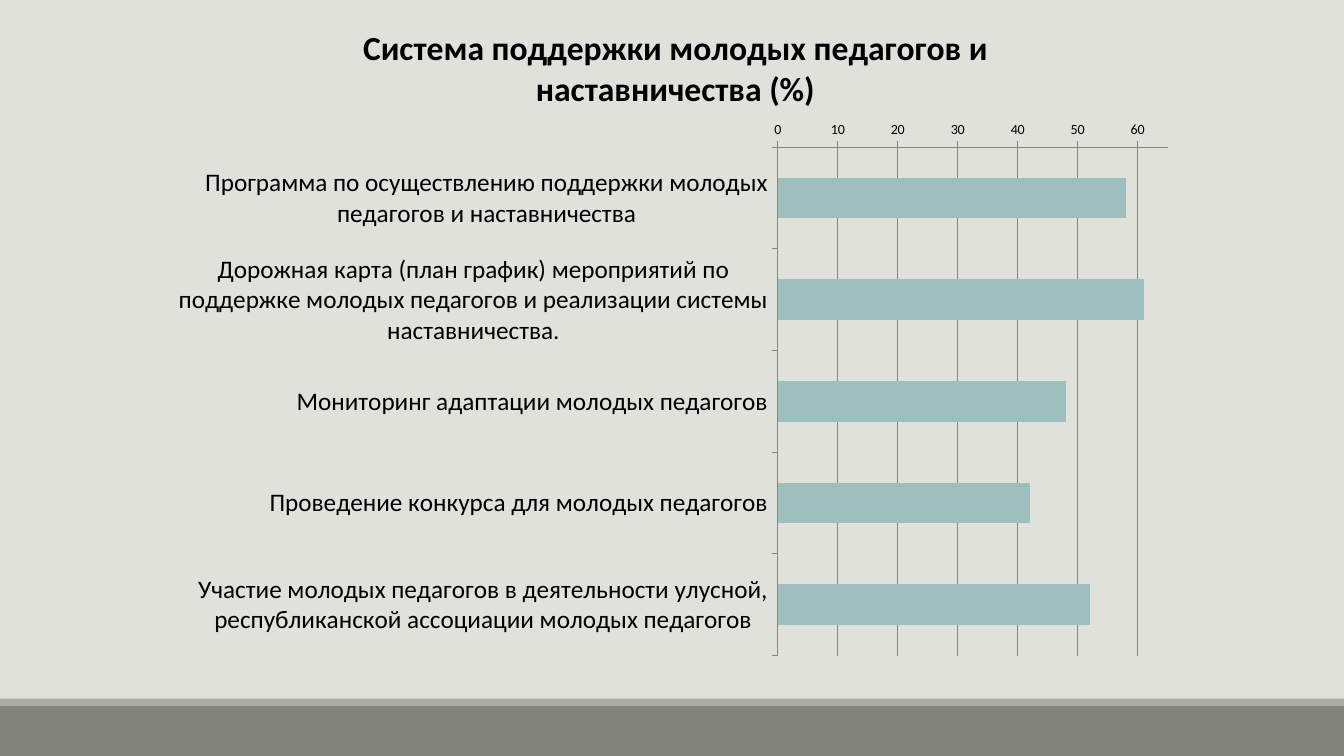
from typing import NamedTuple

from lxml.etree import SubElement
from pptx import Presentation
from pptx.chart.axis import ValueAxis
from pptx.chart.chart import Chart
from pptx.chart.data import CategoryChartData
from pptx.dml.color import RGBColor
from pptx.enum.chart import XL_CHART_TYPE, XL_TICK_MARK
from pptx.enum.shapes import MSO_SHAPE
from pptx.oxml.ns import qn
from pptx.slide import Slide
from pptx.text.text import Font, TextFrame
from pptx.util import Inches, Pt

WIDTH, HEIGHT = Inches(13.33), Inches(7.5)
FONT = "Calibri"
COLORS = {
    "background": "E1E1DB",
    "footer": "82847C",
    "stripe": "ACADA8",
    "bar": "9DBFBE",
    "axis": "868686",
    "text": "000000",
}


class Band(NamedTuple):
    """Full-width strip; top and height are shares of the slide height."""
    top: float
    height: float
    color: str


class Indicator(NamedTuple):
    label: str
    percent: int


BANDS = [Band(0.933, 0.067, "footer"), Band(0.924, 0.009, "stripe")]
INDICATORS = [
    Indicator("Программа по осуществлению поддержки молодых педагогов и наставничества", 58),
    Indicator("Дорожная карта (план график) мероприятий по поддержке молодых педагогов "
              "и реализации системы наставничества.", 61),
    Indicator("Мониторинг адаптации молодых педагогов", 48),
    Indicator("Проведение конкурса для молодых педагогов", 42),
    Indicator("Участие молодых педагогов в деятельности улусной, республиканской "
              "ассоциации молодых педагогов", 52),
]


def rgb(name: str) -> RGBColor:
    return RGBColor.from_string(COLORS[name])


def format_font(font: Font, size: float, bold: bool = False, color: str = "text") -> None:
    font.name, font.size, font.bold = FONT, Pt(size), bold
    font.color.rgb = rgb(color)


def write_text(tf: TextFrame, text: str, **style) -> None:
    r = tf.paragraphs[0].add_run()
    r.text = text
    format_font(r.font, **style)


def add_band(s: Slide, band: Band) -> None:
    sp = s.shapes.add_shape(MSO_SHAPE.RECTANGLE, 0, int(HEIGHT * band.top),
                            WIDTH, int(HEIGHT * band.height))
    sp.shadow.inherit = False
    sp.fill.solid()
    sp.fill.fore_color.rgb = rgb(band.color)
    sp.line.fill.background()


def place_plot(chart: Chart, **shares: float) -> None:
    """Fix the inner plot area, given as shares of the chart frame."""
    area = chart.element.find(".//" + qn("c:plotArea"))
    for old in area.findall(qn("c:layout")):
        area.remove(old)
    layout = SubElement(area, qn("c:layout"))
    area.insert(0, layout)
    manual = SubElement(layout, qn("c:manualLayout"))
    settings = {"layoutTarget": "inner", "xMode": "edge", "yMode": "edge", **shares}
    for tag, value in settings.items():
        SubElement(manual, qn(f"c:{tag}")).set("val", str(value))


def style_value_axis(axis: ValueAxis) -> None:
    axis.minimum_scale, axis.maximum_scale, axis.major_unit = 0, 65, 10
    axis.has_major_gridlines = True
    line = axis.major_gridlines.format.line
    line.color.rgb, line.width = rgb("axis"), Pt(0.75)
    axis.tick_labels.number_format = "0"
    axis.tick_labels.number_format_is_linked = False


def add_support_chart(s: Slide) -> None:
    data = CategoryChartData(number_format="0")
    data.categories = [item.label for item in INDICATORS]
    data.add_series("Series 1", [item.percent for item in INDICATORS])
    chart = s.shapes.add_chart(XL_CHART_TYPE.BAR_STACKED, int(WIDTH * 0.121), 0,
                               int(WIDTH * 0.763), int(HEIGHT * 0.885), data).chart
    format_font(chart.font, size=10)
    chart.has_legend = False
    chart.has_title = True
    chart.chart_title.include_in_layout = False
    write_text(chart.chart_title.text_frame,
               "Система поддержки молодых педагогов и наставничества (%)",
               size=24, bold=True)

    plot = chart.plots[0]
    plot.gap_width, plot.overlap = 150, 100
    plot.vary_by_categories = False
    fill = plot.series[0].format.fill
    fill.solid()
    fill.fore_color.rgb = rgb("bar")

    for axis, size in ((chart.category_axis, 18), (chart.value_axis, 10)):
        axis.major_tick_mark = XL_TICK_MARK.OUTSIDE
        axis.minor_tick_mark = XL_TICK_MARK.NONE
        axis.format.line.color.rgb = rgb("axis")
        axis.format.line.width = Pt(0.75)
        format_font(axis.tick_labels.font, size=size)
    chart.category_axis.reverse_order = True
    style_value_axis(chart.value_axis)
    place_plot(chart, x=0.6, y=0.22, w=0.38, h=0.76)


def main() -> None:
    prs = Presentation()
    prs.slide_width, prs.slide_height = WIDTH, HEIGHT
    s = prs.slides.add_slide(prs.slide_layouts[6])
    s.background.fill.solid()
    s.background.fill.fore_color.rgb = rgb("background")
    for band in BANDS:
        add_band(s, band)
    add_support_chart(s)
    prs.save("out.pptx")


if __name__ == "__main__":
    main()
